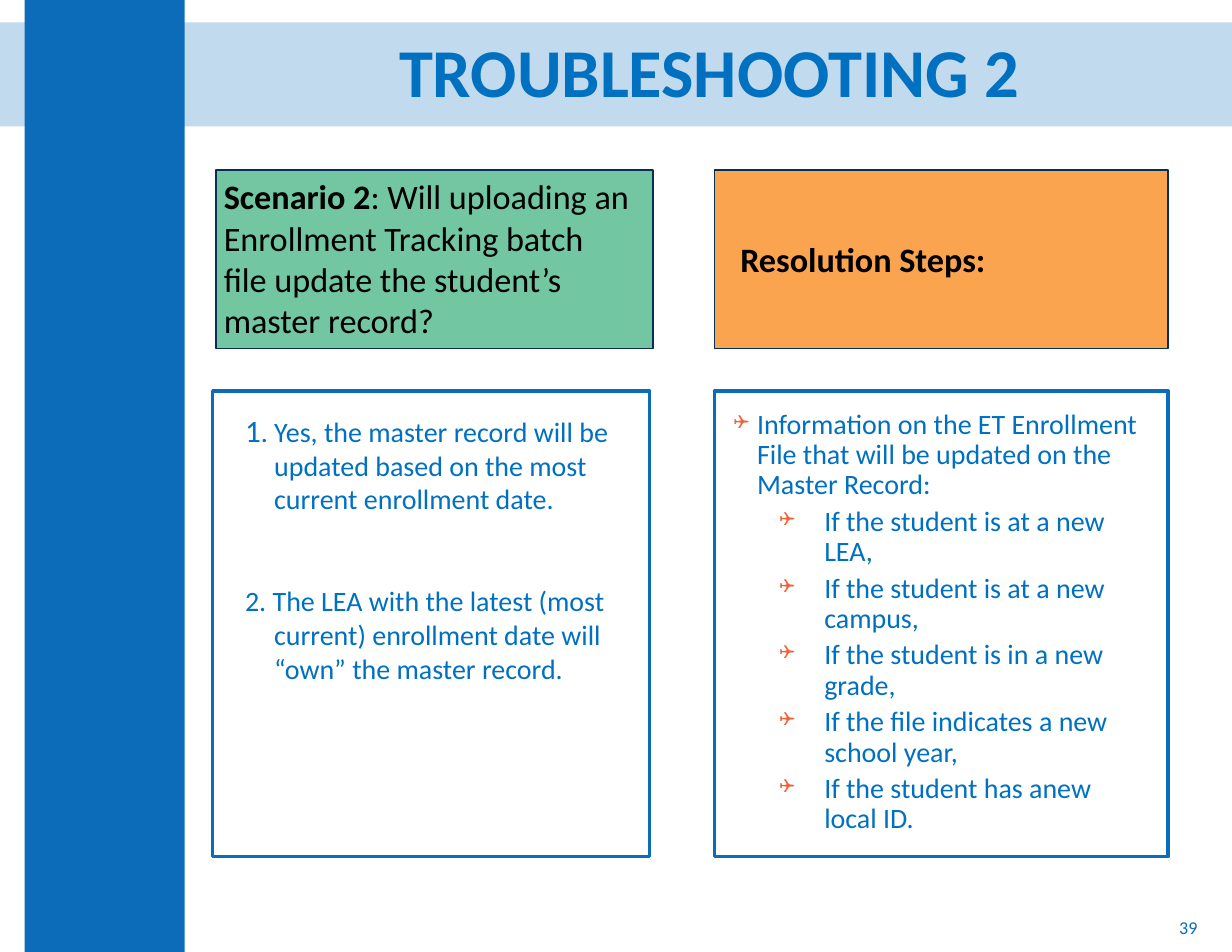
from lxml import etree
from pptx import Presentation
from pptx.dml.color import RGBColor
from pptx.enum.shapes import MSO_SHAPE
from pptx.enum.text import MSO_ANCHOR, PP_ALIGN
from pptx.oxml.ns import qn
from pptx.util import Inches, Pt

RECT = MSO_SHAPE.RECTANGLE
TOP, MIDDLE = MSO_ANCHOR.TOP, MSO_ANCHOR.MIDDLE
LEFT, CENTER, RIGHT = PP_ALIGN.LEFT, PP_ALIGN.CENTER, PP_ALIGN.RIGHT
FONT = "Calibri"
COLORS = {
    "blue": "0D6CB9", "text": "0070C0", "black": "000000", "navy": "062F51",
    "green": "72C6A2", "orange": "FAA450", "bullet": "F16038",
}
CHANGES = [
    "If the student is at a new LEA,",
    "If the student is at a new campus,",
    "If the student is in a new grade,",
    "If the file indicates a new school year,",
    "If the student has anew local ID.",
]


def rgb(name):
    return RGBColor.from_string(COLORS[name])


def add_rect(slide, box, fill=None, line=None, width=1):
    sp = slide.shapes.add_shape(RECT, *map(Inches, box))
    sp.shadow.inherit = False
    if fill:
        sp.fill.solid()
        sp.fill.fore_color.rgb = rgb(fill)
    else:
        sp.fill.background()
    if line:
        sp.line.color.rgb = rgb(line)
        sp.line.width = Pt(width)
    else:
        sp.line.fill.background()
    return sp


def add_text_box(slide, box):
    return slide.shapes.add_textbox(*map(Inches, box)).text_frame


def set_frame(tf, anchor=TOP, **margins):
    tf.word_wrap = True
    tf.vertical_anchor = anchor
    for side, value in margins.items():
        setattr(tf, f"margin_{side}", Inches(value))


def write(p, runs, color, indent=None, **fmt):
    """Fill a paragraph with (text, size, bold) runs."""
    if indent:
        left, first = indent
        p_pr = p._p.get_or_add_pPr()
        p_pr.set("marL", str(Inches(left)))
        p_pr.set("indent", str(Inches(first)))
    for name, value in fmt.items():
        setattr(p, name, value)
    for text, size, bold in runs:
        r = p.add_run()
        r.text = text
        font = {"name": FONT, "size": Pt(size), "bold": bold}
        for name, value in font.items():
            setattr(r.font, name, value)
        r.font.color.rgb = rgb(color)


def add_bullet(p):
    p_pr = p._p.get_or_add_pPr()
    color = etree.SubElement(p_pr, qn("a:buClr"))
    etree.SubElement(color, qn("a:srgbClr"), val=COLORS["bullet"])
    etree.SubElement(p_pr, qn("a:buSzPct"), val="70000")
    etree.SubElement(p_pr, qn("a:buFont"), typeface="Wingdings")
    etree.SubElement(p_pr, qn("a:buChar"), char="❑")


def add_frame(slide):
    # Pale band behind the title, then the side bar over it
    band = add_rect(slide, (0, 0.2, 11, 0.93), fill="blue")
    color = band.fill._xPr.find(f".//{qn('a:srgbClr')}")
    etree.SubElement(color, qn("a:alpha"), val="25000")
    add_rect(slide, (0.22, 0, 1.43, 8.5), fill="blue")

    # Slide number
    tf = add_text_box(slide, (8.31, 8.05, 2.48, 0.45))
    set_frame(tf, MIDDLE)
    write(tf.paragraphs[0], [("39", 11.6, False)], "blue", alignment=RIGHT)


def add_title(slide, box):
    title = slide.shapes.title
    title.left, title.top, title.width, title.height = map(Inches, box)
    slide.shapes._spTree.append(title._element)  # in front of the band
    set_frame(title.text_frame, MIDDLE)
    write(title.text_frame.paragraphs[0], [("TROUBLESHOOTING 2", 44, True)],
          "text", alignment=CENTER, line_spacing=0.9)


def add_scenario(slide, box):
    left, top, width, height = box
    add_rect(slide, box, "green", "navy")
    tf = add_text_box(slide, (left - 0.03, top, width - 0.05, height))
    set_frame(tf)
    write(tf.paragraphs[0], [
        ("Scenario 2", 22, True),
        (": Will uploading an Enrollment Tracking batch file update the "
         "student’s master record?", 22, False),
    ], "black")


def add_answers(slide, box):
    left, top, width, height = box
    add_rect(slide, box, line="blue", width=2.25)
    tf = add_text_box(slide, (left + 0.19, top + 0.13, width - 0.37, 2.86))
    set_frame(tf)
    hanging = (0.26, -0.26)
    write(tf.paragraphs[0], [
        ("1", 20, False),
        (". Yes, the master record will be updated based on the most "
         "current enrollment date.", 18, False),
    ], "text", hanging)
    write(tf.add_paragraph(), [
        ("2. The LEA with the latest (most current) enrollment date will "
         "“own” the master record.", 18, False),
    ], "text", hanging, space_before=Pt(44))


def add_resolution_heading(slide, box):
    tf = add_rect(slide, box, "orange", "navy").text_frame
    set_frame(tf, MIDDLE, left=0.23)
    write(tf.paragraphs[0], [("Resolution Steps:", 22, True)], "black",
          alignment=LEFT)


def add_resolution_steps(slide, box):
    left, top, width, height = box
    add_rect(slide, box, line="blue", width=2.25)
    tf = add_text_box(slide, (left + 0.09, top + 0.13, width - 0.18, height - 0.25))
    set_frame(tf, left=0.08, right=0.08, top=0.04, bottom=0.04)
    p = tf.paragraphs[0]
    add_bullet(p)
    write(p, [("Information on the ET Enrollment File that will be updated "
               "on the Master Record:", 18, False)],
          "text", (0.21, -0.21), line_spacing=0.9)
    for change in CHANGES:
        p = tf.add_paragraph()
        add_bullet(p)
        write(p, [(change, 18, False)], "text", (0.81, -0.4),
              level=1, line_spacing=0.9, space_before=Pt(4.1))


def main():
    prs = Presentation()
    prs.slide_width, prs.slide_height = Inches(11), Inches(8.5)
    slide = prs.slides.add_slide(prs.slide_layouts[5])
    add_frame(slide)
    add_title(slide, (1.99, 0.21, 8.69, 0.93))

    # Two columns: heading above, details below
    head_top, head_height = 1.52, 1.59
    body_top, body_height = 3.49, 4.16
    right_x, right_width = 6.38, 4.05
    add_scenario(slide, (1.93, head_top, 3.9, head_height))
    add_answers(slide, (1.9, body_top, 3.9, body_height))
    add_resolution_heading(slide, (right_x, head_top, right_width, head_height))
    add_resolution_steps(slide, (right_x, body_top, right_width, body_height))
    prs.save("out.pptx")


if __name__ == "__main__":
    main()
